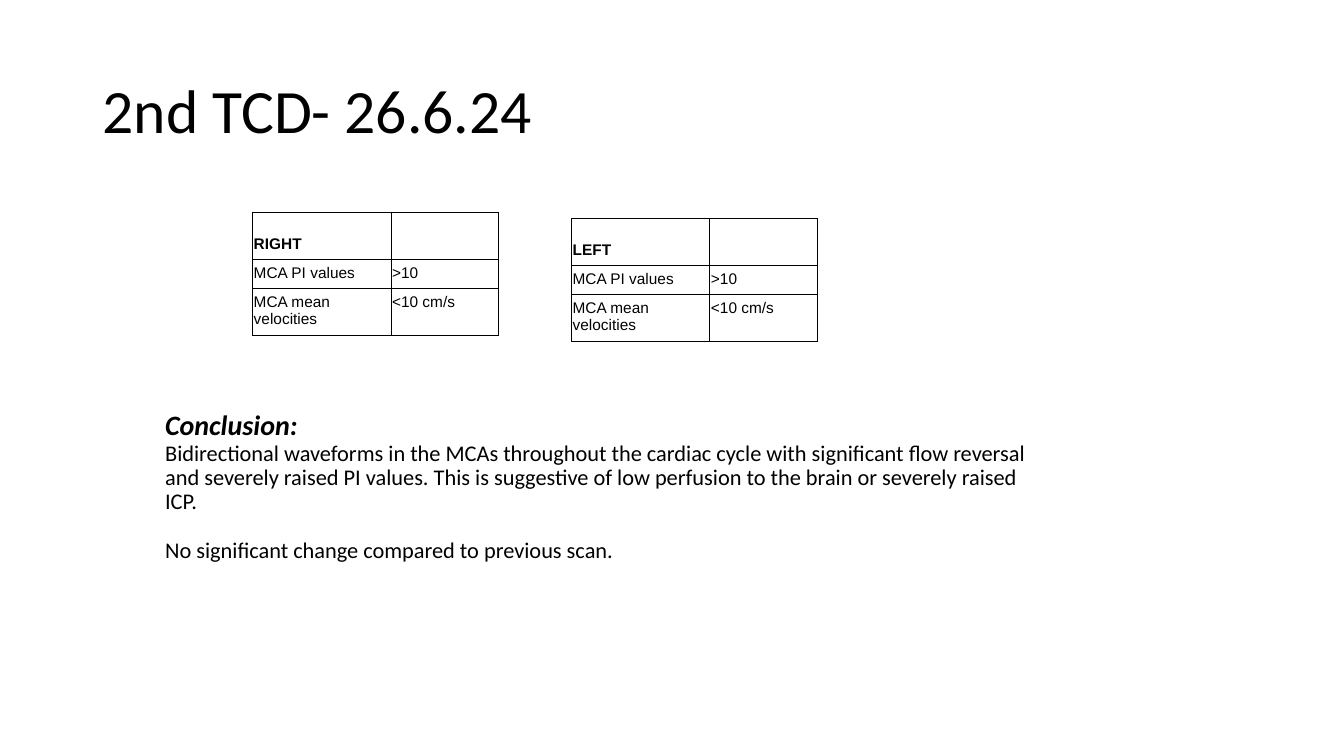
import dataclasses

import pptx
import pptx.dml.color
import pptx.enum.text
import pptx.oxml
import pptx.oxml.ns
import pptx.util

Pt = pptx.util.Pt
RGB = pptx.dml.color.RGBColor
Anchor = pptx.enum.text.MSO_ANCHOR


@dataclasses.dataclass(frozen=True)
class Theme:
    """Colours, fonts and type sizes of the slide."""
    ink: str = "000000"
    paper: str = "FFFFFF"
    body_font: str = "Calibri"
    table_font: str = "Arial"
    title_size: float = 44
    heading_size: float = 20
    body_size: float = 16
    table_size: float = 11
    line_spacing: float = 0.9
    border_width: float = 0.75


THEME = Theme()


def add_span(para, text, size, font=THEME.body_font, bold=False, italic=False):
    """Add one formatted run to a paragraph."""
    span = para.add_run()
    span.text = text
    span.font.name = font
    span.font.size = Pt(size)
    span.font.bold = bold
    span.font.italic = italic
    span.font.color.rgb = RGB.from_string(THEME.ink)


def add_borders(cell):
    """Draw a thin line on all four sides of a cell."""
    properties = cell._tc.get_or_add_tcPr()
    for position, side in enumerate(("lnL", "lnR", "lnT", "lnB")):
        line = pptx.oxml.parse_xml(
            f'<a:{side} {pptx.oxml.ns.nsdecls("a")} w="{Pt(THEME.border_width)}">'
            f'<a:solidFill><a:srgbClr val="{THEME.ink}"/></a:solidFill></a:{side}>')
        properties.insert(position, line)


def add_title(page, text, left, top, width, height):
    """Place and format the title placeholder."""
    title = page.shapes.title
    title.left, title.top, title.width, title.height = map(Pt, (left, top, width, height))
    frame = title.text_frame
    frame.auto_size = pptx.enum.text.MSO_AUTO_SIZE.NONE
    frame.vertical_anchor = Anchor.MIDDLE
    para = frame.paragraphs[0]
    para.alignment = pptx.enum.text.PP_ALIGN.LEFT
    para.line_spacing = THEME.line_spacing
    add_span(para, text, THEME.title_size)


def add_side_table(page, side, left, top, column_widths, row_heights):
    """Add the table of MCA readings for one side of the head."""
    readings = [(side, ""), ("MCA PI values", ">10"), ("MCA mean velocities", "<10 cm/s")]
    frame = page.shapes.add_table(
        len(row_heights), len(column_widths), Pt(left), Pt(top),
        Pt(sum(column_widths)), Pt(sum(row_heights)))
    table = frame.table
    table.first_row = table.horz_banding = False
    for column, width in zip(table.columns, column_widths):
        column.width = Pt(width)
    for row_index, (row, height, texts) in enumerate(zip(table.rows, row_heights, readings)):
        row.height = Pt(height)
        is_header = row_index == 0
        for cell, text in zip(row.cells, texts):
            cell.margin_left = cell.margin_right = Pt(0.75)
            cell.margin_top = Pt(3.6)
            cell.margin_bottom = Pt(4.8 if is_header else 3.6)
            cell.vertical_anchor = Anchor.BOTTOM if is_header else Anchor.TOP
            cell.fill.solid()
            cell.fill.fore_color.rgb = RGB.from_string(THEME.paper)
            add_borders(cell)
            if text:
                add_span(cell.text_frame.paragraphs[0], text, THEME.table_size,
                         THEME.table_font, bold=is_header)


def add_conclusion(page, heading, findings, left, top, width, height):
    """Add the conclusion heading and its findings, spaced one line apart."""
    box = page.shapes.add_textbox(Pt(left), Pt(top), Pt(width), Pt(height))
    frame = box.text_frame
    frame.word_wrap = True
    frame.vertical_anchor = Anchor.TOP
    para = frame.paragraphs[0]
    para.line_spacing = THEME.line_spacing
    add_span(para, heading, THEME.heading_size, bold=True, italic=True)
    for index, finding in enumerate(findings):
        para = frame.add_paragraph()
        para.line_spacing = THEME.line_spacing
        para.space_before = Pt(17.5 if index else 0)
        add_span(para, finding, THEME.body_size)


def build_scan_page(deck):
    """Build the page with the second scan's readings and conclusion."""
    page = deck.slides.add_slide(deck.slide_layouts[5])
    add_title(page, "2nd TCD- 26.6.24", 66.2, 28.8, 828, 104.4)
    for side, left, top in (("RIGHT", 180.5, 151.7), ("LEFT", 408.3, 156.1)):
        add_side_table(page, side, left, top, (98.8, 76.6), (33.6, 20.7, 33.6))
    add_conclusion(page, "Conclusion:", (
        "Bidirectional waveforms in the MCAs throughout the cardiac cycle with significant "
        "flow reversal and severely raised PI values. This is suggestive of low perfusion "
        "to the brain or severely raised ICP.",
        "No significant change compared to previous scan.",
    ), 110.9, 290.5, 630.7, 117)


def main():
    """Create the deck and save it."""
    deck = pptx.Presentation()
    deck.slide_width, deck.slide_height = Pt(960), Pt(540)
    build_scan_page(deck)
    deck.save("out.pptx")


if __name__ == "__main__":
    main()
